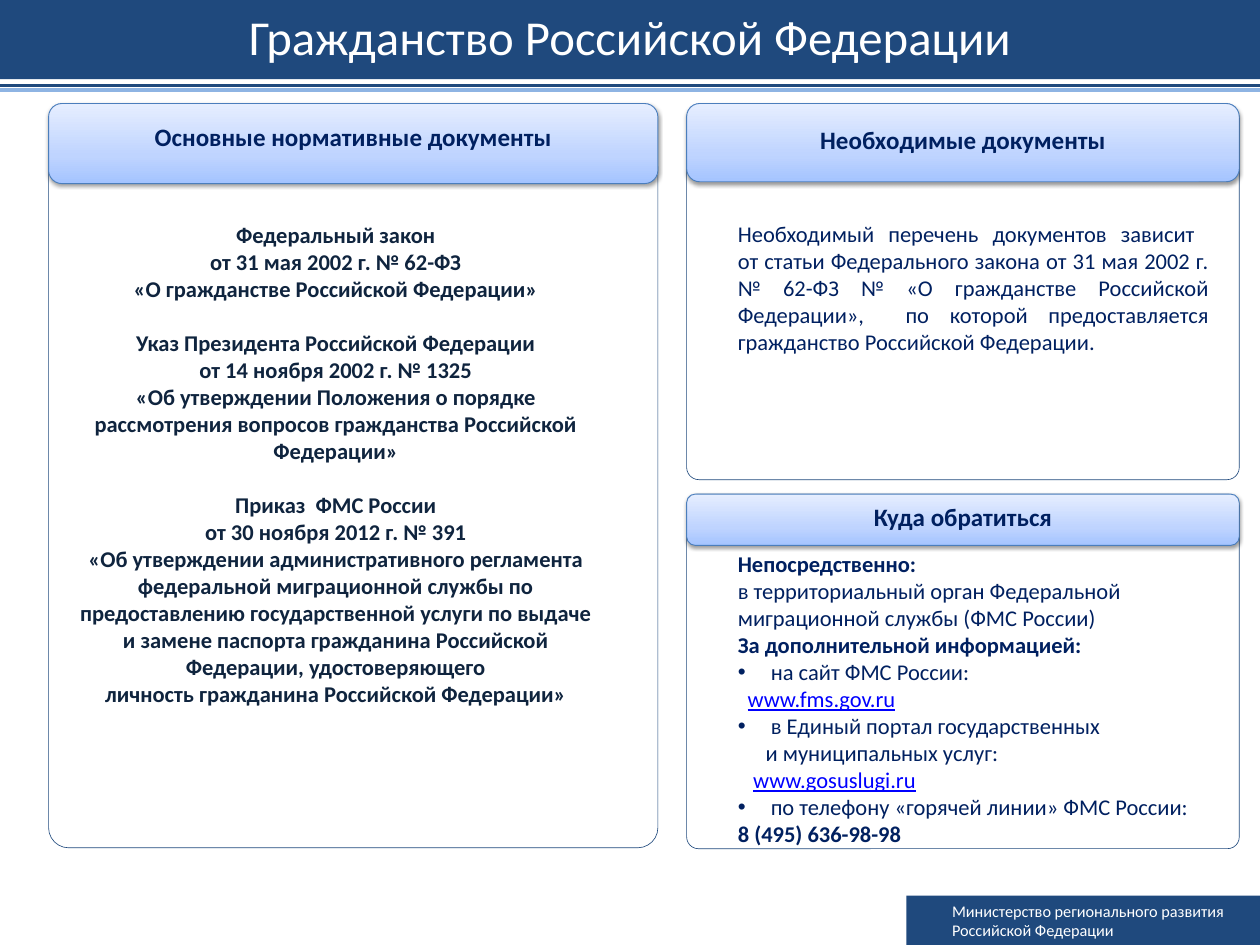
from lxml.etree import SubElement
from pptx import Presentation
from pptx.dml.color import RGBColor
from pptx.enum.shapes import MSO_CONNECTOR, MSO_SHAPE
from pptx.enum.text import MSO_ANCHOR, PP_ALIGN
from pptx.oxml import parse_xml
from pptx.oxml.ns import nsdecls, qn
from pptx.util import Inches, Pt

NAVY, SKY, WHITE = "1F497D", "8EB4E3", "FFFFFF"
INK, DARK, LINK = "002060", "0F243E", "0000FF"
FONT = "Calibri"

LAWS = [
    ["Федеральный закон",
     "от 31 мая 2002 г. № 62-ФЗ",
     "«О гражданстве Российской Федерации»"],
    ["Указ Президента Российской Федерации",
     "от 14 ноября 2002 г. № 1325",
     "«Об утверждении Положения о порядке рассмотрения вопросов "
     "гражданства Российской Федерации»"],
    ["Приказ  ФМС России",
     "от 30 ноября 2012 г. № 391",
     "«Об утверждении административного регламента федеральной миграционной "
     "службы по предоставлению государственной услуги по выдаче",
     "и замене паспорта гражданина Российской Федерации, удостоверяющего",
     "личность гражданина Российской Федерации»"],
]
REQUIRED = ("Необходимый перечень документов зависит \n"
            "от статьи Федерального закона от 31 мая 2002 г. № 62-ФЗ № "
            "«О гражданстве Российской Федерации»,  по которой "
            "предоставляется гражданство Российской Федерации.")
# (text, style, left indent in inches)
CONTACTS = [
    ("Непосредственно:", "bold", 0),
    ("в территориальный орган Федеральной миграционной службы (ФМС России)", "plain", 0),
    ("За дополнительной информацией:", "bold", 0),
    (" на сайт ФМС России:", "bullet", 0.31),
    ("www.fms.gov.ru", "link", 0.11),
    (" в Единый портал государственных \nи муниципальных услуг:", "bullet", 0.31),
    ("www.gosuslugi.ru", "link", 0.17),
    (" по телефону «горячей линии» ФМС России:", "bullet", 0.31),
    ("8 (495) 636-98-98", "bold", 0),
]


def rgb(value):
    return RGBColor.from_string(value)


def write(paragraph, text, size, color, bold=False, underline=False):
    for number, line in enumerate(text.split("\n")):
        if number:
            paragraph.add_line_break()
        run = paragraph.add_run()
        run.text = line
        font = run.font
        font.name, font.size, font.bold = FONT, Pt(size), bold
        font.underline = underline
        font.color.rgb = rgb(color)


def indent(paragraph, left, bullet=False):
    props = paragraph._p.get_or_add_pPr()
    props.set("marL", str(Inches(left)))
    if bullet:
        props.set("indent", str(-Inches(left)))
        SubElement(props, qn("a:buFont"), typeface="Arial")
        SubElement(props, qn("a:buChar"), char="•")


def add_box(slide, kind, box, fill=None, line=None, width=0.5):
    shape = slide.shapes.add_shape(kind, *map(Inches, box))
    shape.shadow.inherit = False
    if fill:
        shape.fill.solid()
        shape.fill.fore_color.rgb = rgb(fill)
    else:
        shape.fill.background()
    if line:
        shape.line.color.rgb = rgb(line)
        shape.line.width = Pt(width)
    else:
        shape.line.fill.background()
    frame = shape.text_frame
    frame.word_wrap = True
    frame.vertical_anchor = MSO_ANCHOR.MIDDLE
    return shape


def add_text_area(slide, box):
    frame = slide.shapes.add_textbox(*map(Inches, box)).text_frame
    frame.word_wrap = True
    return frame


def next_paragraph(frame, first):
    return frame.paragraphs[0] if first else frame.add_paragraph()


def add_title(slide, box):
    left, top, width, height = box
    # Double rule under the band
    for y, color in ((top + height + 0.07, NAVY), (top + height + 0.12, SKY)):
        rule = slide.shapes.add_connector(
            MSO_CONNECTOR.STRAIGHT, Inches(left), Inches(y), Inches(left + width), Inches(y))
        rule.line.color.rgb = rgb(color)
        rule.line.width = Pt(3)
        SubElement(rule._element.spPr, qn("a:effectLst"))
    band = add_box(slide, MSO_SHAPE.RECTANGLE, box, NAVY)
    paragraph = band.text_frame.paragraphs[0]
    paragraph.alignment = PP_ALIGN.CENTER
    paragraph.line_spacing = Pt(40.6)
    write(paragraph, "Гражданство Российской Федерации", 39, WHITE)


def style_header(header):
    """Vertical blue gradient and a soft shadow below."""
    props = header._element.spPr
    stops = "".join(f'<a:gs pos="{at * 1000}"><a:srgbClr val="{color}"/></a:gs>'
                    for at, color in ((0, "A4C4FF"), (35, "BFD4FF"), (100, "E6EEFF")))
    gradient = parse_xml(f'<a:gradFill {nsdecls("a")} rotWithShape="1"><a:gsLst>{stops}</a:gsLst>'
                         '<a:lin ang="16200000" scaled="0"/></a:gradFill>')
    props.replace(props.find(qn("a:noFill")), gradient)
    shadow = SubElement(props.find(qn("a:effectLst")), qn("a:outerShdw"), blurRad=str(Pt(3.1)),
                        dist=str(Pt(1.6)), dir="5400000", rotWithShape="0")
    color = SubElement(shadow, qn("a:srgbClr"), val="000000")
    SubElement(color, qn("a:alpha"), val="38000")


def add_panel(slide, box, heading, header_height, body_offset=0, spacing=19.6):
    left, top, width, height = box
    body = add_box(slide, MSO_SHAPE.ROUNDED_RECTANGLE,
                   (left, top + body_offset, width, height - body_offset), line=NAVY)
    body.adjustments[0] = 0.033
    header = add_box(slide, MSO_SHAPE.ROUNDED_RECTANGLE,
                     (left, top, width, header_height), line="4B7EBC", width=0.75)
    style_header(header)
    header.text_frame.margin_left = header.text_frame.margin_right = 0
    paragraph = header.text_frame.paragraphs[0]
    paragraph.alignment = PP_ALIGN.CENTER
    paragraph.line_spacing = Pt(spacing)
    write(paragraph, heading, 20, INK, bold=True)


def add_laws(slide, box):
    frame = add_text_area(slide, box)
    for group, lines in enumerate(LAWS):
        for row, line in enumerate(lines):
            paragraph = next_paragraph(frame, group == row == 0)
            paragraph.alignment = PP_ALIGN.CENTER
            if group and row == 0:
                paragraph.space_before = Pt(21.6)
            write(paragraph, line, 18, DARK, bold=True)


def add_required(slide, box):
    paragraph = add_text_area(slide, box).paragraphs[0]
    paragraph.alignment = PP_ALIGN.JUSTIFY
    write(paragraph, REQUIRED, 18, INK)


def add_contacts(slide, box):
    frame = add_text_area(slide, box)
    for row, (text, style, left) in enumerate(CONTACTS):
        paragraph = next_paragraph(frame, row == 0)
        indent(paragraph, left, style == "bullet")
        link = style == "link"
        write(paragraph, text, 18, LINK if link else INK, style == "bold", link)


def add_footer(slide, box):
    paragraph = add_box(slide, MSO_SHAPE.RECTANGLE, box, NAVY).text_frame.paragraphs[0]
    paragraph.alignment = PP_ALIGN.LEFT
    indent(paragraph, 0.41)
    write(paragraph, "Министерство регионального развития\nРоссийской Федерации", 13, WHITE)


def main():
    deck = Presentation()
    deck.slide_width, deck.slide_height = Inches(14), Inches(10.5)
    slide = deck.slides.add_slide(deck.slide_layouts[6])

    add_footer(slide, (10.07, 9.95, 3.93, 0.55))
    add_title(slide, (0, 0, 14, 0.88))

    # Panels
    add_panel(slide, (0.54, 1.15, 6.77, 8.27), "Основные нормативные документы",
              0.89, body_offset=0.49, spacing=13)
    add_panel(slide, (7.63, 1.15, 6.14, 4.18), "Необходимые документы", 0.87, body_offset=0.03)
    add_panel(slide, (7.63, 5.49, 6.14, 3.94), "Куда обратиться", 0.57)

    # Panel contents
    add_laws(slide, (0.62, 2.41, 6.22, 6.38))
    add_contacts(slide, (8.1, 6.06, 5.43, 3.4))
    add_required(slide, (8.1, 2.4, 5.43, 1.6))

    deck.save("out.pptx")


if __name__ == "__main__":
    main()
